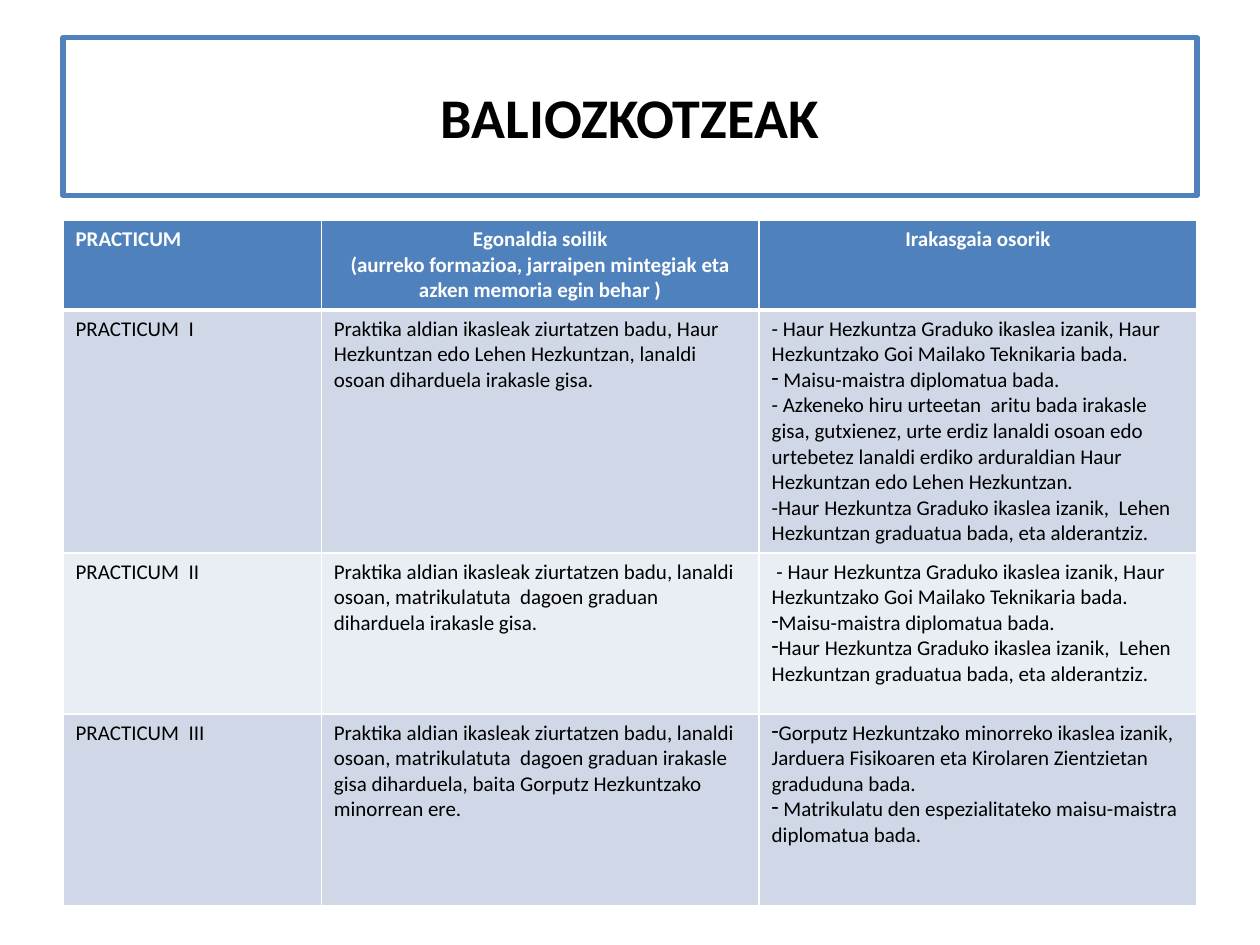
from lxml.etree import SubElement
from pptx import Presentation
from pptx.dml.color import RGBColor
from pptx.enum.shapes import MSO_SHAPE
from pptx.enum.text import MSO_ANCHOR, PP_ALIGN
from pptx.oxml import parse_xml
from pptx.oxml.ns import nsdecls, qn
from pptx.util import Pt

BLUE = RGBColor(0x4F, 0x81, 0xBD)
BAND_DARK = RGBColor(0xD0, 0xD8, 0xE8)
BAND_LIGHT = RGBColor(0xE9, 0xED, 0xF4)
WHITE = RGBColor(0xFF, 0xFF, 0xFF)
BLACK = RGBColor(0, 0, 0)
FONT = "Calibri"

COL_WIDTHS = [147.6, 250.2, 250.2]
ROW_HEIGHTS = [51, 138.5, 92, 109.5]
HEADER = [
    ["PRACTICUM"],
    ["Egonaldia soilik",
     "(aurreko formazioa, jarraipen mintegiak eta azken memoria egin behar )"],
    ["Irakasgaia osorik"],
]
GRADUATE = "Haur Hezkuntza Graduko ikaslea izanik,  Lehen Hezkuntzan graduatua bada, eta alderantziz."
TECHNICIAN = "- Haur Hezkuntza Graduko ikaslea izanik, Haur Hezkuntzako Goi Mailako Teknikaria bada."
BODY = [
    [["PRACTICUM  I"],
     ["Praktika aldian ikasleak ziurtatzen badu, Haur Hezkuntzan edo Lehen Hezkuntzan, "
      "lanaldi  osoan diharduela irakasle gisa."],
     [TECHNICIAN,
      ("-", " Maisu-maistra diplomatua bada."),
      "- Azkeneko hiru urteetan  aritu bada irakasle gisa, gutxienez, urte erdiz lanaldi osoan "
      "edo urtebetez lanaldi erdiko arduraldian Haur Hezkuntzan edo Lehen Hezkuntzan.",
      "-" + GRADUATE]],
    [["PRACTICUM  II"],
     ["Praktika aldian ikasleak ziurtatzen badu, lanaldi osoan, matrikulatuta  dagoen graduan "
      "diharduela irakasle gisa."],
     [" " + TECHNICIAN,
      ("-", "Maisu-maistra diplomatua bada."),
      ("-", GRADUATE)]],
    [["PRACTICUM  III"],
     ["Praktika aldian ikasleak ziurtatzen badu, lanaldi osoan, matrikulatuta  dagoen graduan "
      "irakasle gisa diharduela, baita Gorputz Hezkuntzako minorrean ere."],
     [("-", "Gorputz Hezkuntzako minorreko ikaslea izanik, Jarduera Fisikoaren eta Kirolaren "
            "Zientzietan graduduna bada."),
      ("-", " Matrikulatu den espezialitateko maisu-maistra diplomatua bada.")]],
]


def write(p, text, size, color, bold, align):
    p.text = text
    p.alignment = align
    for r in p.runs:
        r.font.name = FONT
        r.font.size = Pt(size)
        r.font.bold = bold
        r.font.color.rgb = color


def add_bullet(p, char):
    pPr = p._p.get_or_add_pPr()
    pPr.set("marL", "0")
    pPr.set("indent", "0")
    SubElement(pPr, qn("a:buFontTx"))
    SubElement(pPr, qn("a:buChar")).set("char", char)


def set_borders(cell, top, bottom):
    tcPr = cell._tc.get_or_add_tcPr()
    widths = {"lnL": 1, "lnR": 1, "lnT": top, "lnB": bottom}
    for i, (tag, width) in enumerate(widths.items()):
        tcPr.insert(i, parse_xml(
            f'<a:{tag} {nsdecls("a")} w="{Pt(width)}"><a:solidFill>'
            f'<a:srgbClr val="{WHITE}"/></a:solidFill></a:{tag}>'))


def fill_cell(cell, items, fill, color, bold, align):
    cell.fill.solid()
    cell.fill.fore_color.rgb = fill
    tf = cell.text_frame
    for i, item in enumerate(items):
        p = tf.paragraphs[0] if i == 0 else tf.add_paragraph()
        bullet, text = item if isinstance(item, tuple) else (None, item)
        write(p, text, 12, color, bold, align)
        if bullet:
            add_bullet(p, bullet)


def add_title(s, x, y, w, h):
    sp = s.shapes.add_shape(MSO_SHAPE.RECTANGLE, Pt(x), Pt(y), Pt(w), Pt(h))
    sp.shadow.inherit = False
    sp.fill.background()
    sp.line.color.rgb = BLUE
    sp.line.width = Pt(3)
    SubElement(sp.line._get_or_add_ln(), qn("a:round"))
    tf = sp.text_frame
    tf.word_wrap = True
    tf.vertical_anchor = MSO_ANCHOR.MIDDLE
    write(tf.paragraphs[0], "BALIOZKOTZEAK", 32, BLACK, True, PP_ALIGN.CENTER)


def add_practicum_table(s, x, y, w, h):
    rows = [HEADER] + BODY
    table = s.shapes.add_table(len(rows), len(HEADER), Pt(x), Pt(y), Pt(w), Pt(h)).table
    for col, width in zip(table.columns, COL_WIDTHS):
        col.width = Pt(width)
    for i, (row, height) in enumerate(zip(rows, ROW_HEIGHTS)):
        table.rows[i].height = Pt(height)
        for j, items in enumerate(row):
            cell = table.cell(i, j)
            if i == 0:
                align = PP_ALIGN.CENTER if j else PP_ALIGN.LEFT
                fill_cell(cell, items, BLUE, WHITE, True, align)
            else:
                fill = BAND_DARK if i % 2 else BAND_LIGHT
                fill_cell(cell, items, fill, BLACK, False, PP_ALIGN.LEFT)
            set_borders(cell, 3 if i == 1 else 1, 3 if i == 0 else 1)


def main():
    prs = Presentation()
    prs.slide_width, prs.slide_height = Pt(720), Pt(540)
    s = prs.slides.add_slide(prs.slide_layouts[6])
    add_title(s, 36, 21.6, 648, 90)
    add_practicum_table(s, 36, 126, sum(COL_WIDTHS), sum(ROW_HEIGHTS))
    prs.save("out.pptx")


if __name__ == "__main__":
    main()
